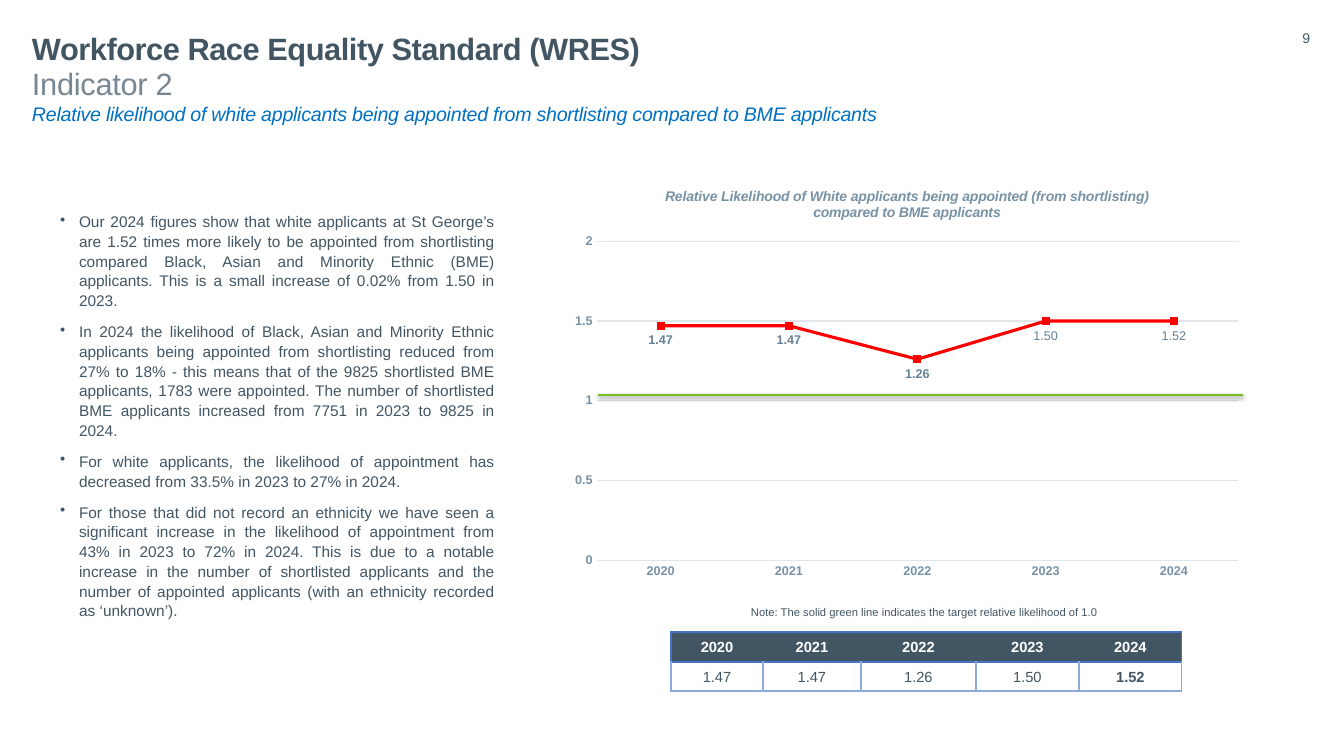
from dataclasses import dataclass

from lxml import etree
from pptx import Presentation
from pptx.chart.data import CategoryChartData
from pptx.dml.color import RGBColor
from pptx.enum.chart import XL_CHART_TYPE, XL_LABEL_POSITION, XL_TICK_MARK
from pptx.enum.shapes import MSO_CONNECTOR
from pptx.enum.text import MSO_ANCHOR, PP_ALIGN
from pptx.oxml import parse_xml
from pptx.oxml.ns import nsdecls, qn
from pptx.util import Emu, Pt

LINE_CHART = XL_CHART_TYPE.LINE
BELOW = XL_LABEL_POSITION.BELOW
NO_TICK = XL_TICK_MARK.NONE
STRAIGHT = MSO_CONNECTOR.STRAIGHT
MIDDLE = MSO_ANCHOR.MIDDLE
LEFT, CENTER, RIGHT, JUSTIFY = PP_ALIGN.LEFT, PP_ALIGN.CENTER, PP_ALIGN.RIGHT, PP_ALIGN.JUSTIFY

EMU_PER_PX = 914400 / 100.8
SLATE, GREY, BLUE, WHITE = "425563", "768692", "0070C0", "FFFFFF"
CHART_GREY, LABEL_GREY, GRID = "7892A5", "658197", "E0E6EA"
RED, GREEN, BORDER, HEADER_BORDER = "FF0000", "78BE20", "8EAADB", "4472C4"
YEARS = ["2020", "2021", "2022", "2023", "2024"]
RATIOS = ["1.47", "1.47", "1.26", "1.50", "1.52"]
PLOTTED = [1.47, 1.47, 1.26, 1.5, 1.5]
COLUMN_WIDTHS = [92, 98, 115, 103, 103]
ROW_HEIGHTS = [30, 29]
CHART_TITLE = ("Relative Likelihood of White applicants being appointed (from shortlisting) "
               "compared to BME applicants")


@dataclass
class Line:
    text: str
    size: float
    color: str = SLATE
    bold: bool = False
    italic: bool = False
    align: PP_ALIGN = LEFT
    tracking: int = 0
    spaced: bool = False
    bullet: bool = False


@dataclass
class TextBlock:
    left: int
    top: int
    width: int
    height: int
    lines: list[Line]
    inset_x: int = 0
    inset_y: int = 0


FINDINGS = [
    "Our 2024 figures show that white applicants at St George’s are 1.52 times more likely to be "
    "appointed from shortlisting compared Black, Asian and Minority Ethnic (BME) applicants. "
    "This is a small increase of 0.02% from 1.50 in 2023.",
    "In 2024 the likelihood of Black, Asian and Minority Ethnic applicants being appointed from "
    "shortlisting reduced from 27% to 18% - this means that of the 9825 shortlisted BME applicants, "
    "1783 were appointed. The number of shortlisted BME applicants increased from 7751 in 2023 "
    "to 9825 in 2024.",
    "For white applicants, the likelihood of appointment has decreased from 33.5% in 2023 "
    "to 27% in 2024.",
    "For those that did not record an ethnicity we have seen a significant increase in the "
    "likelihood of appointment from 43% in 2023 to 72% in 2024. This is due to a notable increase "
    "in the number of shortlisted applicants and the number of appointed applicants "
    "(with an ethnicity recorded as ‘unknown’).",
]

BLOCKS = [
    TextBlock(1277, 30, 33, 25, [Line("9", 10, align=RIGHT)]),
    TextBlock(32, 30, 707, 34, [
        Line("Workforce Race Equality Standard (WRES)", 22, bold=True, tracking=-30)]),
    TextBlock(32, 65, 875, 76, [
        Line("Indicator 2", 22, GREY, tracking=-20),
        Line("Relative likelihood of white applicants being appointed from shortlisting "
             "compared to BME applicants", 14, BLUE, italic=True, tracking=-20)]),
    TextBlock(25, 206, 480, 454, [
        Line(text, 11, align=JUSTIFY, spaced=True, bullet=True) for text in FINDINGS], 10, 5),
    TextBlock(676, 599, 497, 29, [
        Line("Note: The solid green line indicates the target relative likelihood of 1.0", 8,
             align=CENTER, spaced=True)], 10, 5),
]


def px(value: int) -> Emu:
    return Emu(round(value * EMU_PER_PX))


def rgb(color: str) -> RGBColor:
    return RGBColor.from_string(color)


def style_font(font, size: float, color: str, bold: bool = False, italic: bool = False) -> None:
    font.name, font.size, font.bold, font.italic = "Arial", Pt(size), bold, italic
    font.color.rgb = rgb(color)


def write_line(para, line: Line) -> None:
    para.text = line.text
    para.alignment = line.align
    if line.spaced:
        para.line_spacing, para.space_after = 1.07, Pt(8)
    if line.bullet:
        properties = para._p.get_or_add_pPr()
        properties.set("marL", str(px(44)))
        properties.set("indent", str(px(-19)))
        etree.SubElement(properties, qn("a:buChar")).set("char", "•")
    span = para.runs[0]
    style_font(span.font, line.size, line.color, line.bold, line.italic)
    if line.tracking:
        span._r.get_or_add_rPr().set("spc", str(line.tracking))


def add_text(page, block: TextBlock) -> None:
    box = page.shapes.add_textbox(px(block.left), px(block.top), px(block.width), px(block.height))
    frame = box.text_frame
    frame.word_wrap = True
    frame.margin_left = frame.margin_right = px(block.inset_x)
    frame.margin_top = frame.margin_bottom = px(block.inset_y)
    for index, line in enumerate(block.lines):
        write_line(frame.add_paragraph() if index else frame.paragraphs[0], line)


def manual_layout(target: str, **fractions: float) -> etree._Element:
    inner = '<c:layoutTarget val="inner"/>' if target == "plot" else ""
    modes = '<c:xMode val="edge"/><c:yMode val="edge"/>'
    places = "".join(f'<c:{key} val="{value}"/>' for key, value in fractions.items())
    return parse_xml(f'<c:layout {nsdecls("c")}><c:manualLayout>{inner}{modes}{places}'
                     "</c:manualLayout></c:layout>")


def add_likelihood_chart(page) -> None:
    data = CategoryChartData()
    data.categories = YEARS
    data.add_series("Series 1", PLOTTED)
    chart = page.shapes.add_chart(LINE_CHART, px(562), px(171), px(690), px(414), data).chart
    style_font(chart.font, 10, SLATE, True)
    chart.has_legend = False
    title = chart.chart_title
    title.text_frame.text = CHART_TITLE
    style_font(title.text_frame.paragraphs[0].runs[0].font, 10, CHART_GREY, True, True)
    title.include_in_layout = False
    for axis in (chart.category_axis, chart.value_axis):
        axis.major_tick_mark = axis.minor_tick_mark = NO_TICK
        style_font(axis.tick_labels.font, 9, CHART_GREY, True)
    scale = chart.value_axis
    scale.minimum_scale, scale.maximum_scale, scale.major_unit = 0, 2, 0.5
    scale.format.line.fill.background()
    for format_line in (chart.category_axis.format.line, scale.major_gridlines.format.line):
        format_line.color.rgb = rgb(GRID)
        format_line.width = Pt(0.75)
    plot = chart.plots[0]
    plot.vary_by_categories = False
    series = plot.series[0]
    series.smooth = False
    series.marker.style = None
    series.format.line.color.rgb = rgb(RED)
    series.format.line.width = Pt(2.25)
    labels = series.data_labels
    labels.show_value = True
    labels.position = BELOW
    style_font(labels.font, 9, LABEL_GREY, True)
    for index in (3, 4):
        label = series.points[index].data_label
        label.text_frame.text = RATIOS[index]
        style_font(label.text_frame.paragraphs[0].runs[0].font, 9, LABEL_GREY)
        label.position = BELOW
    area = plot._element.getparent()
    for old in area.findall(qn("c:layout")):
        area.remove(old)
    area.insert(0, manual_layout("plot", x=0.05, y=0.17, w=0.93, h=0.77))


def add_target_line(page) -> None:
    target = page.shapes.add_connector(STRAIGHT, px(598), px(395), px(1243), px(395))
    target.line.color.rgb = rgb(GREEN)
    target.line.width = Pt(2)
    target._element.spPr.append(parse_xml(
        f'<a:effectLst {nsdecls("a")}><a:outerShdw blurRad="{Pt(3.1)}" dist="{Pt(1.6)}" '
        'dir="5400000" rotWithShape="0"><a:srgbClr val="000000"><a:alpha val="38000"/>'
        "</a:srgbClr></a:outerShdw></a:effectLst>"))


def border_cell(cell, sides: dict[str, str]) -> None:
    properties = cell._tc.get_or_add_tcPr()
    for index, (side, color) in enumerate(sides.items()):
        fill = f'<a:solidFill><a:srgbClr val="{color}"/></a:solidFill>' if color else "<a:noFill/>"
        properties.insert(index, parse_xml(
            f'<a:{side} {nsdecls("a")} w="{Pt(1)}">{fill}</a:{side}>'))


def add_ratio_table(page) -> None:
    table = page.shapes.add_table(2, len(YEARS), px(671), px(632), px(sum(COLUMN_WIDTHS)),
                                  px(sum(ROW_HEIGHTS))).table
    table.first_row = table.horz_banding = False
    for column, width in zip(table.columns, COLUMN_WIDTHS):
        column.width = px(width)
    last = len(YEARS) - 1
    for row_index, values in enumerate((YEARS, RATIOS)):
        table.rows[row_index].height = px(ROW_HEIGHTS[row_index])
        header = row_index == 0
        for index, value in enumerate(values):
            cell = table.cell(row_index, index)
            cell.vertical_anchor = MIDDLE
            cell.margin_left = cell.margin_right = px(7)
            cell.margin_top = cell.margin_bottom = 0
            write_line(cell.text_frame.paragraphs[0], Line(
                value, 10.5, WHITE if header else SLATE, header or index == last,
                align=CENTER, spaced=True))
            if header:
                cell.fill.solid()
                cell.fill.fore_color.rgb = rgb(SLATE)
                border_cell(cell, {"lnL": "" if index else HEADER_BORDER,
                                   "lnR": HEADER_BORDER if index == last else "",
                                   "lnT": HEADER_BORDER, "lnB": HEADER_BORDER})
            else:
                cell.fill.background()
                border_cell(cell, {"lnL": BORDER, "lnR": BORDER,
                                   "lnT": HEADER_BORDER, "lnB": BORDER})


def main() -> None:
    deck = Presentation()
    deck.slide_width, deck.slide_height = px(1344), px(756)
    page = deck.slides.add_slide(deck.slide_layouts[6])
    for block in BLOCKS:
        add_text(page, block)
    add_likelihood_chart(page)
    add_target_line(page)
    add_ratio_table(page)
    deck.save("out.pptx")


if __name__ == "__main__":
    main()
